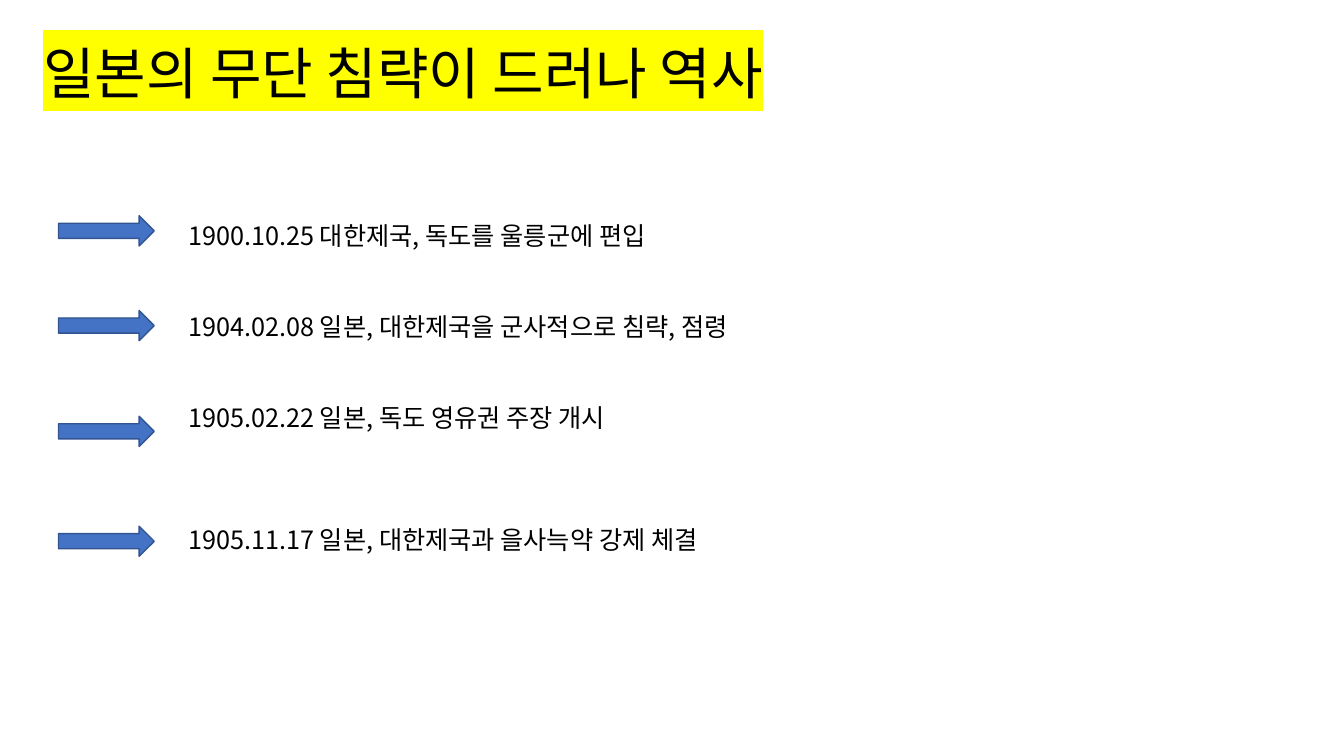
from lxml import etree
from pptx import Presentation
from pptx.dml.color import RGBColor
from pptx.enum.shapes import MSO_SHAPE
from pptx.enum.text import MSO_ANCHOR, MSO_AUTO_SIZE, PP_ALIGN
from pptx.oxml.ns import qn
from pptx.util import Inches, Pt

RIGHT_ARROW = MSO_SHAPE.RIGHT_ARROW
TOP, LEFT = MSO_ANCHOR.TOP, PP_ALIGN.LEFT
NO_AUTOFIT = MSO_AUTO_SIZE.NONE

TITLE = "일본의 무단 침략이 드러나 역사"
# (event, top of its arrow in inches, blank lines' worth of space above it)
EVENTS = [
    ("1900.10.25 대한제국, 독도를 울릉군에 편입", 2.14, 0),
    ("1904.02.08 일본, 대한제국을 군사적으로 침략, 점령", 3.08, 2),
    ("1905.02.22 일본, 독도 영유권 주장 개시", 4.13, 2),
    ("1905.11.17 일본, 대한제국과 을사늑약 강제 체결", 5.22, 3),
]
THEME = {
    "font": "Noto Sans CJK KR",
    "ink": "000000",
    "highlight": "FFFF00",
    "arrow": "4472C4",
    "arrow_line": "325491",
    "title_size": 40,
    "event_size": 18,
    "line_pitch": 21.67,
}
TITLE_BOX = (0.33, 0.33, 12.21, 0.77)
EVENTS_BOX = (1.77, 2.14, 7.65, 3.43)
ARROW_LEFT, ARROW_WIDTH, ARROW_HEIGHT = 0.58, 0.95, 0.3


def rgb(name):
    return RGBColor.from_string(THEME[name])


def set_all(target, values):
    for name, value in values.items():
        setattr(target, name, value)


def place(shape, box):
    set_all(shape, dict(zip(("left", "top", "width", "height"), map(Inches, box))))


def prepare_frame(frame):
    set_all(frame, {"word_wrap": True, "auto_size": NO_AUTOFIT,
                    "vertical_anchor": TOP,
                    "margin_left": Inches(0.1), "margin_right": Inches(0.1),
                    "margin_top": Inches(0.05), "margin_bottom": Inches(0.05)})


def write_line(para, text, size, space_before=0):
    """Fill a paragraph with one run, using the theme font for Latin and Korean."""
    pitch = THEME["line_pitch"] / THEME["event_size"] * size
    set_all(para, {"alignment": LEFT, "line_spacing": Pt(pitch),
                   "space_before": Pt(space_before)})
    span = para.add_run()
    span.text = text
    set_all(span.font, {"size": Pt(size), "name": THEME["font"], "bold": False})
    span.font.color.rgb = rgb("ink")
    korean = etree.SubElement(span.font._element, qn("a:ea"))
    korean.set("typeface", THEME["font"])
    return span


def add_highlight(span):
    properties = span.font._element
    highlight = etree.Element(qn("a:highlight"))
    etree.SubElement(highlight, qn("a:srgbClr")).set("val", THEME["highlight"])
    properties.find(qn("a:latin")).addprevious(highlight)


def add_title(page):
    title = page.shapes.title
    place(title, TITLE_BOX)
    prepare_frame(title.text_frame)
    add_highlight(write_line(title.text_frame.paragraphs[0], TITLE, THEME["title_size"]))


def add_arrow(page, top):
    arrow = page.shapes.add_shape(
        RIGHT_ARROW, *map(Inches, (ARROW_LEFT, top, ARROW_WIDTH, ARROW_HEIGHT)))
    arrow.shadow.inherit = False
    arrow.fill.solid()
    arrow.fill.fore_color.rgb = rgb("arrow")
    arrow.line.color.rgb = rgb("arrow_line")
    arrow.line.width = Pt(1)


def add_events(page):
    for _, arrow_top, _ in EVENTS:
        add_arrow(page, arrow_top)
    frame = page.shapes.add_textbox(*map(Inches, EVENTS_BOX)).text_frame
    prepare_frame(frame)
    for index, (text, _, blank_lines) in enumerate(EVENTS):
        para = frame.add_paragraph() if index else frame.paragraphs[0]
        write_line(para, text, THEME["event_size"], blank_lines * THEME["line_pitch"])


def main():
    deck = Presentation()
    set_all(deck, {"slide_width": Inches(13.33), "slide_height": Inches(7.5)})
    page = deck.slides.add_slide(deck.slide_layouts.get_by_name("Title Only"))
    add_title(page)
    add_events(page)
    deck.save("out.pptx")


if __name__ == "__main__":
    main()
